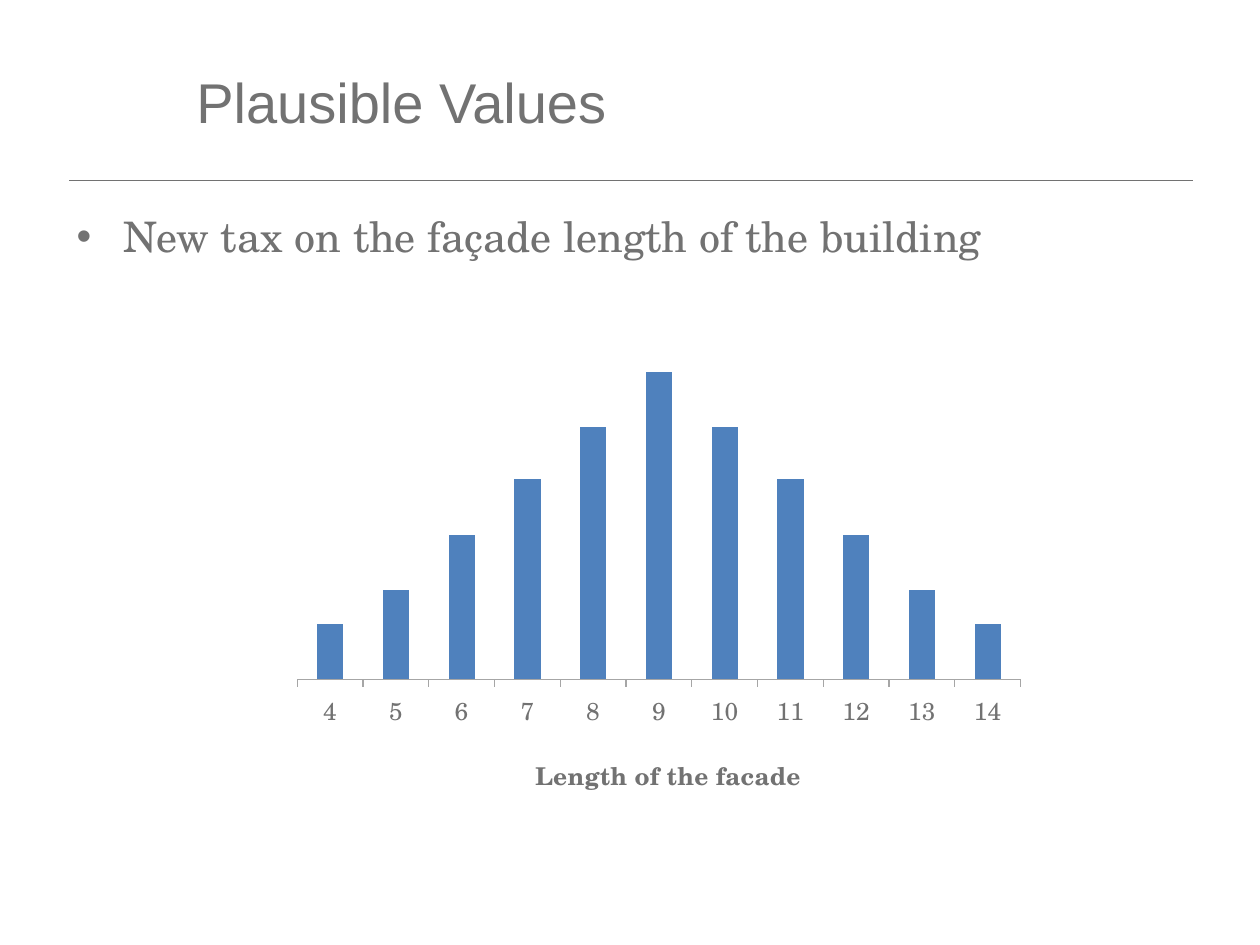
from typing import NamedTuple

from lxml import etree
from pptx import Presentation
from pptx import util as u
from pptx.chart.data import CategoryChartData
from pptx.dml.color import RGBColor
from pptx.enum import chart as ch, shapes, text
from pptx.oxml import parse_xml
from pptx.oxml.ns import nsdecls, qn

WIDTH, HEIGHT = 10, 7.5
COLOURS = {"ink": "727272", "bar": "4F81BD", "axis": "A6A6A6"}
HEADING_FONT, BODY_FONT = "Arial", "TeX Gyre Schola"


class Box(NamedTuple):
    """A place on the slide, as shares of its width and height."""
    left: float
    top: float
    width: float
    height: float

    def lengths(self) -> list[int]:
        sides = (WIDTH, HEIGHT, WIDTH, HEIGHT)
        return [u.Inches(share * side) for share, side in zip(self, sides)]


RULE = Box(0.055, 0.191, 0.892, 0)
TITLE = Box(0.146, 0.048, 0.709, 0.119)
BODY = Box(0.051, 0.216, 0.899, 0.077)
CHART = Box(0.224, 0.364, 0.598, 0.493)
# Shares of the chart's own area
PLOT = {"x": 0.02, "y": 0.06, "w": 0.96, "h": 0.66}
AXIS_TITLE = {"x": 0.33, "y": 0.87}


def rgb(name: str) -> RGBColor:
    return RGBColor.from_string(COLOURS[name])


def style_font(font, name: str, size: float, bold: bool = False) -> None:
    font.name, font.size, font.bold = name, u.Pt(size), bold
    font.color.rgb = rgb("ink")


def add_text(slide, box: Box, words: str, *, font: str, size: float,
             anchor=text.MSO_ANCHOR.TOP, bullet: str = "", indent: float = 0) -> None:
    frame = slide.shapes.add_textbox(*box.lengths()).text_frame
    frame.word_wrap = True
    frame.vertical_anchor = anchor
    paragraph = frame.paragraphs[0]
    if bullet:
        props = paragraph._p.get_or_add_pPr()
        props.set("marL", str(u.Inches(indent)))
        props.set("indent", str(-u.Inches(indent)))
        colour = etree.SubElement(props, qn("a:buClr"))
        etree.SubElement(colour, qn("a:srgbClr"), val=COLOURS["ink"])
        etree.SubElement(props, qn("a:buFont"), typeface="Arial")
        etree.SubElement(props, qn("a:buChar"), char=bullet)
    run = paragraph.add_run()
    run.text = words
    style_font(run.font, font, size)


def add_rule(slide, box: Box) -> None:
    left, top, width, height = box.lengths()
    rule = slide.shapes.add_connector(
        shapes.MSO_CONNECTOR.STRAIGHT, left, top, left + width, top + height)
    rule.line.color.rgb = rgb("ink")
    rule.line.width = u.Pt(0.5)
    etree.SubElement(rule._element.spPr, qn("a:effectLst"))


def manual_layout(shares: dict[str, float], inner: bool = False):
    target = '<c:layoutTarget val="inner"/>' if inner else ""
    modes = "".join(f'<c:{key}Mode val="edge"/>' for key in "xy")
    places = "".join(f'<c:{key} val="{share}"/>' for key, share in shares.items())
    return parse_xml(f'<c:layout {nsdecls("c")}><c:manualLayout>{target}{modes}'
                     f'{places}</c:manualLayout></c:layout>')


def set_layout(parent, layout, before: str) -> None:
    for old in parent.findall(qn("c:layout")):
        parent.remove(old)
    parent.find(qn(before)).addprevious(layout)


def add_length_chart(slide) -> None:
    rising = [18, 29, 47, 65, 82]
    data = CategoryChartData()
    data.categories = [str(length) for length in range(4, 15)]
    data.add_series("Series 1", rising + [100] + rising[::-1])
    chart = slide.shapes.add_chart(
        ch.XL_CHART_TYPE.COLUMN_CLUSTERED, *CHART.lengths(), data).chart
    chart.has_legend = chart.has_title = False
    style_font(chart.font, BODY_FONT, 10)

    plot = chart.plots[0]
    plot.gap_width, plot.vary_by_categories = 150, False
    bars = plot.series[0].format.fill
    bars.solid()
    bars.fore_color.rgb = rgb("bar")

    values = chart.value_axis
    values.visible = values.has_major_gridlines = False
    values.minimum_scale, values.maximum_scale = 0, 100

    lengths = chart.category_axis
    lengths.major_tick_mark = ch.XL_TICK_MARK.OUTSIDE
    lengths.format.line.color.rgb = rgb("axis")
    lengths.format.line.width = u.Pt(0.75)
    style_font(lengths.tick_labels.font, BODY_FONT, 14)
    caption = lengths.axis_title.text_frame.paragraphs[0].add_run()
    caption.text = "Length of the facade"
    style_font(caption.font, BODY_FONT, 14, bold=True)

    set_layout(chart._chartSpace.chart.plotArea, manual_layout(PLOT, inner=True),
               "c:barChart")
    set_layout(lengths.axis_title._element, manual_layout(AXIS_TITLE), "c:overlay")


def main() -> None:
    deck = Presentation()
    deck.slide_width, deck.slide_height = u.Inches(WIDTH), u.Inches(HEIGHT)
    slide = deck.slides.add_slide(deck.slide_layouts[6])
    add_rule(slide, RULE)
    add_text(slide, TITLE, "Plausible Values", font=HEADING_FONT, size=32,
             anchor=text.MSO_ANCHOR.MIDDLE)
    add_text(slide, BODY, "New tax on the façade length of the building",
             font=BODY_FONT, size=24, bullet="•", indent=0.37)
    add_length_chart(slide)
    deck.save("out.pptx")


if __name__ == "__main__":
    main()
